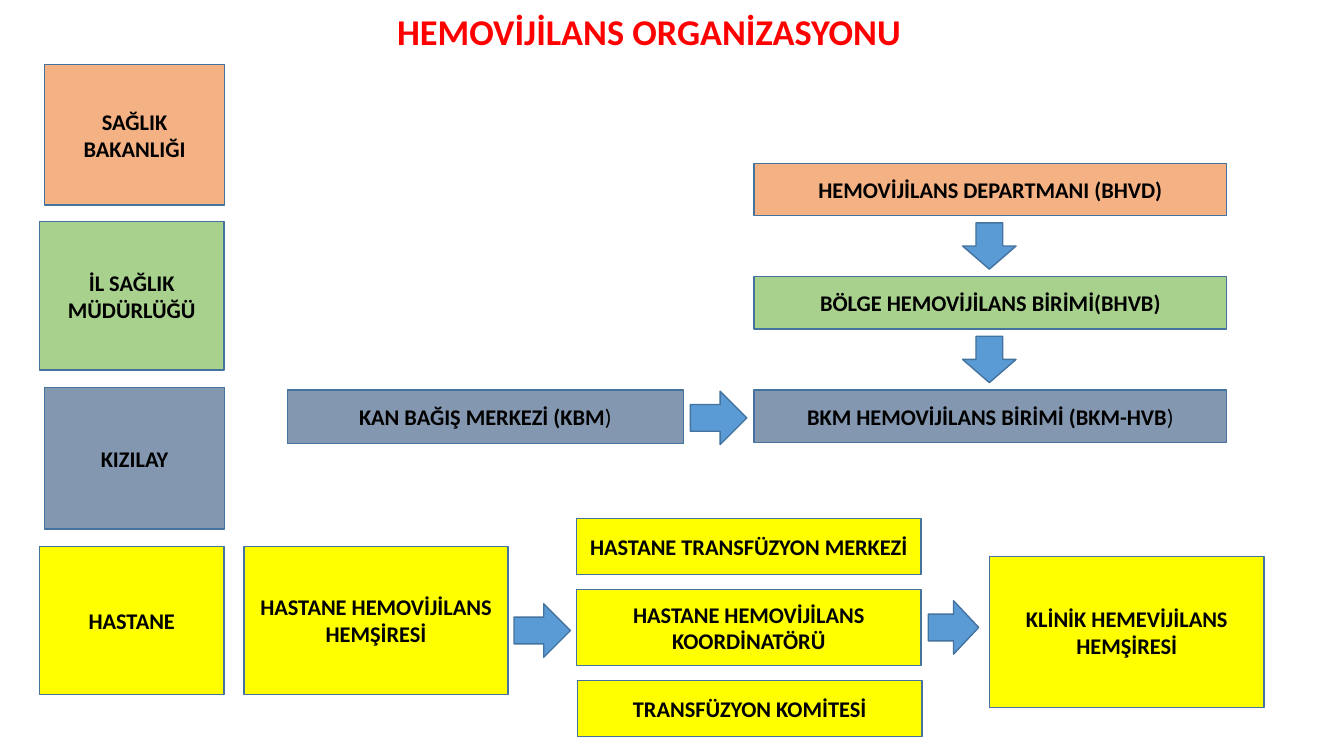
from dataclasses import dataclass

from pptx import Presentation
from pptx.dml.color import RGBColor
from pptx.enum.shapes import MSO_SHAPE as SHAPE
from pptx.enum.text import MSO_ANCHOR as ANCHOR, PP_ALIGN as ALIGN
from pptx.util import Pt

MINISTRY, PROVINCE, RED_CRESCENT, HOSPITAL = "F4B183", "A9D18E", "8497B0", "FFFF00"
ARROW_FILL, OUTLINE = "5B9BD5", "43739E"
UNIT_TOP, UNIT_STEP = 116.6, 81


@dataclass
class Box:
    left: float
    top: float
    width: float
    height: float
    fill: str
    bold: str
    plain: str = ""


@dataclass
class Arrow:
    left: float
    top: float
    width: float
    height: float
    kind: SHAPE = SHAPE.RIGHT_ARROW


LEVELS = [
    Box(31.7, 46.1, 128.9, 100.4, MINISTRY, "SAĞLIK BAKANLIĞI"),
    Box(28.1, 158.4, 132, 106, PROVINCE, "İL SAĞLIK MÜDÜRLÜĞÜ"),
    Box(31.7, 277, 128.9, 100.8, RED_CRESCENT, "KIZILAY"),
    Box(28.1, 390.2, 132, 106, HOSPITAL, "HASTANE"),
]
UNITS = [
    Box(538.6, UNIT_TOP + i * UNIT_STEP, 337.7, 37.5, fill, bold, plain)
    for i, (fill, bold, plain) in enumerate([
        (MINISTRY, "HEMOVİJİLANS DEPARTMANI (BHVD)", ""),
        (PROVINCE, "BÖLGE HEMOVİJİLANS BİRİMİ(BHVB)", ""),
        (RED_CRESCENT, "BKM HEMOVİJİLANS BİRİMİ (BKM-HVB", ")"),
    ])
]
DONATION = Box(205.2, 278.6, 283, 38, RED_CRESCENT, "KAN BAĞIŞ MERKEZİ (KBM", ")")
HOSPITAL_UNITS = [
    Box(174.3, 390.2, 188.6, 106, HOSPITAL, "HASTANE HEMOVİJİLANS HEMŞİRESİ"),
    Box(411.8, 370.6, 246.2, 39.8, HOSPITAL, "HASTANE TRANSFÜZYON MERKEZİ"),
    Box(411.8, 421.2, 246.2, 54, HOSPITAL, "HASTANE HEMOVİJİLANS KOORDİNATÖRÜ"),
    Box(412.4, 486, 246.2, 40.3, HOSPITAL, "TRANSFÜZYON KOMİTESİ"),
    Box(707, 397.4, 195.8, 108, HOSPITAL, "KLİNİK HEMEVİJİLANS HEMŞİRESİ"),
]
ARROWS = [Arrow(687.6, 159.2 + i * UNIT_STEP, 38.2, 33.1, SHAPE.DOWN_ARROW) for i in range(2)] + [
    Arrow(493.2, 279.4, 40.3, 38.2),
    Arrow(367.2, 431.3, 40.3, 38.2),
    Arrow(663.1, 429.1, 36, 38.2),
]


def rgb(value: str) -> RGBColor:
    return RGBColor.from_string(value)


def add_run(p, text: str, size: float, color: str, bold: bool = True) -> None:
    r = p.add_run()
    r.text = text
    for name, value in {"name": "Calibri", "size": Pt(size), "bold": bold}.items():
        setattr(r.font, name, value)
    r.font.color.rgb = rgb(color)


def add_outlined(s, kind: SHAPE, item: Box | Arrow, fill: str):
    sp = s.shapes.add_shape(kind, Pt(item.left), Pt(item.top), Pt(item.width), Pt(item.height))
    sp.shadow.inherit = False
    sp.fill.solid()
    sp.fill.fore_color.rgb = rgb(fill)
    sp.line.color.rgb = rgb(OUTLINE)
    sp.line.width = Pt(1)
    return sp


def add_box(s, box: Box) -> None:
    tf = add_outlined(s, SHAPE.RECTANGLE, box, box.fill).text_frame
    tf.word_wrap = True
    tf.vertical_anchor = ANCHOR.MIDDLE
    p = tf.paragraphs[0]
    p.alignment = ALIGN.CENTER
    add_run(p, box.bold, 16, "000000")
    if box.plain:
        add_run(p, box.plain, 16, "000000", bold=False)


def add_title(s, text: str) -> None:
    tf = s.shapes.add_textbox(Pt(147.6), Pt(11.5), Pt(551.5), Pt(31)).text_frame
    tf.word_wrap = True
    tf.margin_left = Pt(136)
    p = tf.paragraphs[0]
    p.line_spacing = 0.7
    add_run(p, text, 25.9, "FF0000")


def main() -> None:
    prs = Presentation()
    prs.slide_width, prs.slide_height = Pt(960), Pt(540)
    s = prs.slides.add_slide(prs.slide_layouts[6])
    add_title(s, "HEMOVİJİLANS ORGANİZASYONU")
    for box in [*LEVELS, *UNITS, DONATION, *HOSPITAL_UNITS]:
        add_box(s, box)
    for arrow in ARROWS:
        add_outlined(s, arrow.kind, arrow, ARROW_FILL)
    prs.save("out.pptx")


if __name__ == "__main__":
    main()
